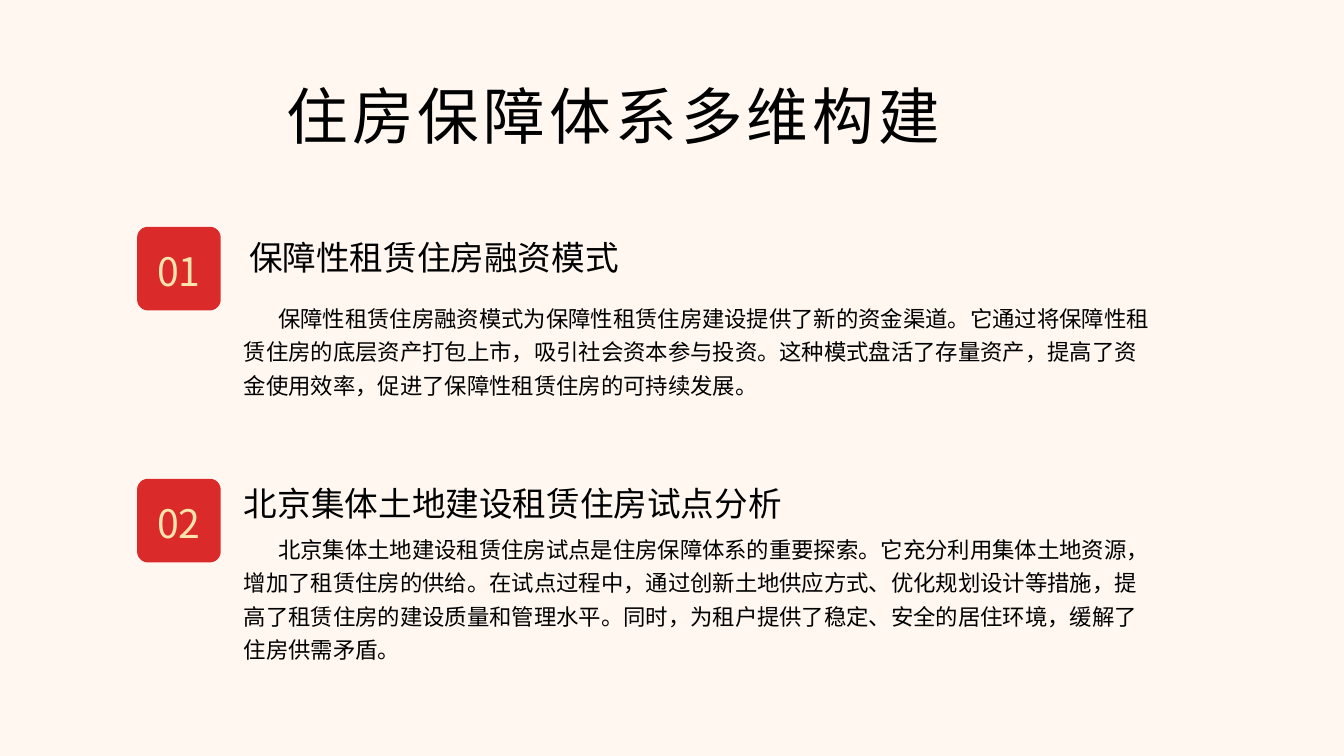
import pptx
import pptx.util
import pptx.dml.color
import pptx.enum.shapes
import pptx.enum.text
import pptx.oxml.ns
import lxml.etree

Inches = pptx.util.Inches
ALIGN = pptx.enum.text.PP_ALIGN
ANCHOR = pptx.enum.text.MSO_ANCHOR
FACE = "Noto Sans CJK SC"
COLORS = {"back": "FFF7F0", "red": "DB2A2A", "gold": "FFE4AE", "ink": "000000"}

TITLE = "住房保障体系多维构建"
PARTS = [
    {
        "num": "01", "box": (1.36, 2.25),
        "head": "保障性租赁住房融资模式", "head_at": (1.11, 0.06),
        "body": "保障性租赁住房融资模式为保障性租赁住房建设提供了新的资金渠道。"
                "它通过将保障性租赁住房的底层资产打包上市，吸引社会资本参与投资。"
                "这种模式盘活了存量资产，提高了资金使用效率，"
                "促进了保障性租赁住房的可持续发展。",
        "body_at": (1.06, 0.71),
    },
    {
        "num": "02", "box": (1.36, 4.75),
        "head": "北京集体土地建设租赁住房试点分析", "head_at": (1.06, 0),
        "body": "北京集体土地建设租赁住房试点是住房保障体系的重要探索。"
                "它充分利用集体土地资源，增加了租赁住房的供给。"
                "在试点过程中，通过创新土地供应方式、优化规划设计等措施，"
                "提高了租赁住房的建设质量和管理水平。"
                "同时，为租户提供了稳定、安全的居住环境，缓解了住房供需矛盾。",
        "body_at": (1.06, 0.5),
    },
]


def color(name):
    return pptx.dml.color.RGBColor.from_string(COLORS[name])


def write(shape, text, size, line, ink="ink", align=ALIGN.LEFT,
          anchor=ANCHOR.TOP, indent=0, track=0):
    frame = shape.text_frame
    frame.word_wrap = True
    frame.auto_size = pptx.enum.text.MSO_AUTO_SIZE.NONE
    frame.vertical_anchor = anchor
    frame.margin_left = frame.margin_right = 0
    frame.margin_top = frame.margin_bottom = 0
    frame.text = text
    para = frame.paragraphs[0]
    para.alignment = align
    para.line_spacing = line
    font = para.font
    font.size = pptx.util.Pt(size)
    font.name = FACE
    font.color.rgb = color(ink)
    qn = pptx.oxml.ns.qn
    props = para._p.get_or_add_pPr()
    if indent:
        props.set("indent", str(Inches(indent)))
    chars = props.find(qn("a:defRPr"))
    east = lxml.etree.Element(qn("a:ea"), typeface=FACE)
    chars.find(qn("a:latin")).addnext(east)
    if track:
        chars.set("spc", str(track * 100))


def add_title(slide, left, top, width, height):
    title = slide.shapes.title
    title.left, title.top = Inches(left), Inches(top)
    title.width, title.height = Inches(width), Inches(height)
    write(title, TITLE, 44, 1.14, track=3)


def add_badge(slide, left, top, size, num):
    badge = slide.shapes.add_shape(
        pptx.enum.shapes.MSO_SHAPE.ROUNDED_RECTANGLE,
        Inches(left), Inches(top), Inches(size), Inches(size))
    badge.adjustments[0] = 0.13
    badge.shadow.inherit = False
    badge.fill.solid()
    badge.fill.fore_color.rgb = color("red")
    badge.line.fill.background()
    write(badge, num, 28, 1.09, "gold", ALIGN.CENTER, ANCHOR.MIDDLE)


def add_part(slide, left, top, part):
    add_badge(slide, left, top, 0.83, part["num"])

    def place(shift, width, height):
        return slide.shapes.add_textbox(
            Inches(left + shift[0]), Inches(top + shift[1]),
            Inches(width), Inches(height))

    write(place(part["head_at"], 9.03, 0.44), part["head"], 24, 1.11)
    write(place(part["body_at"], 9, 1.33), part["body"], 16, 1.25, indent=0.34)


def main():
    deck = pptx.Presentation()
    deck.slide_width, deck.slide_height = Inches(13.33), Inches(7.5)
    slide = deck.slides.add_slide(deck.slide_layouts[5])
    slide.background.fill.solid()
    slide.background.fill.fore_color.rgb = color("back")
    add_title(slide, 2.84, 0.67, 10.15, 0.83)
    for part in PARTS:
        add_part(slide, *part["box"], part)
    deck.save("out.pptx")


if __name__ == "__main__":
    main()
